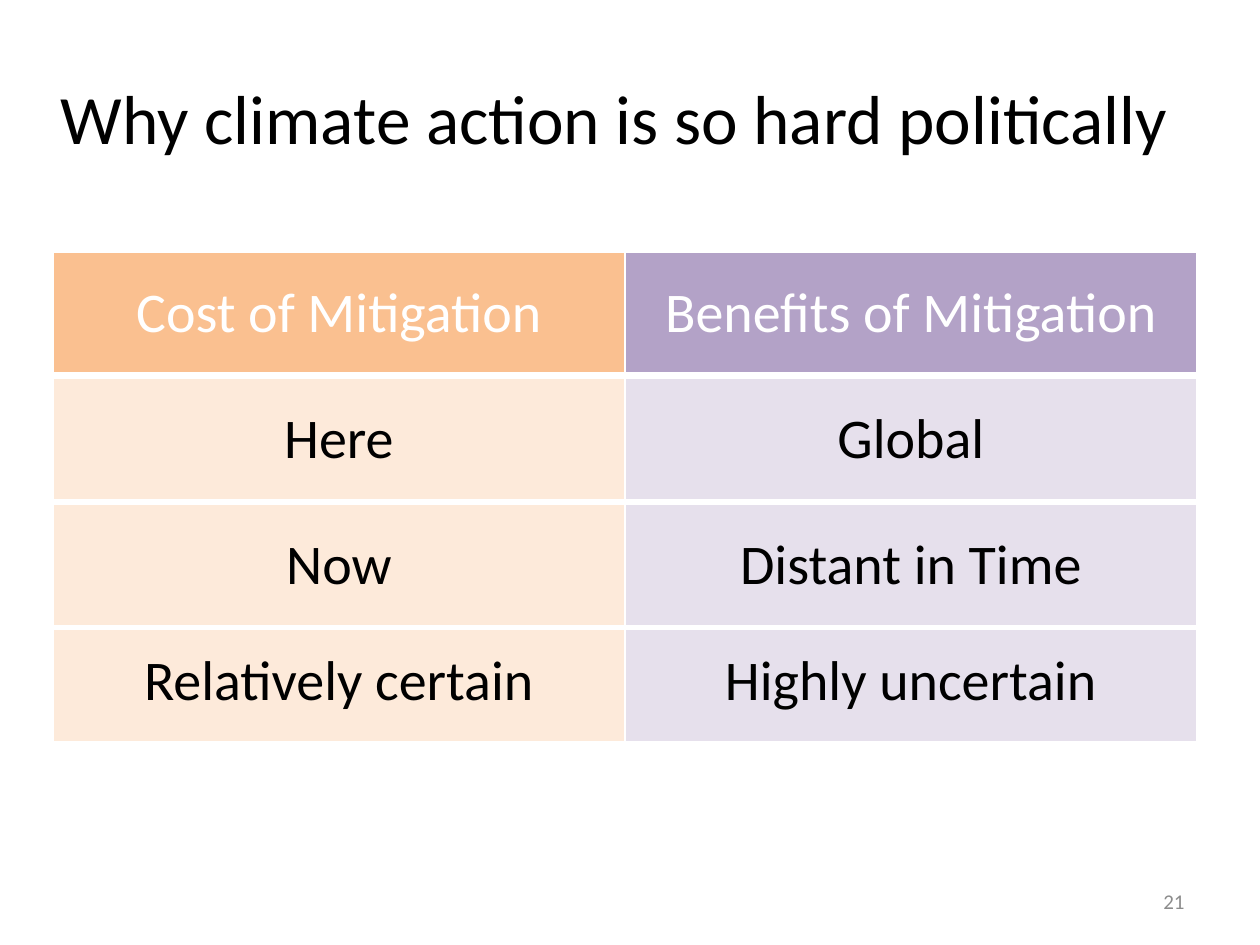
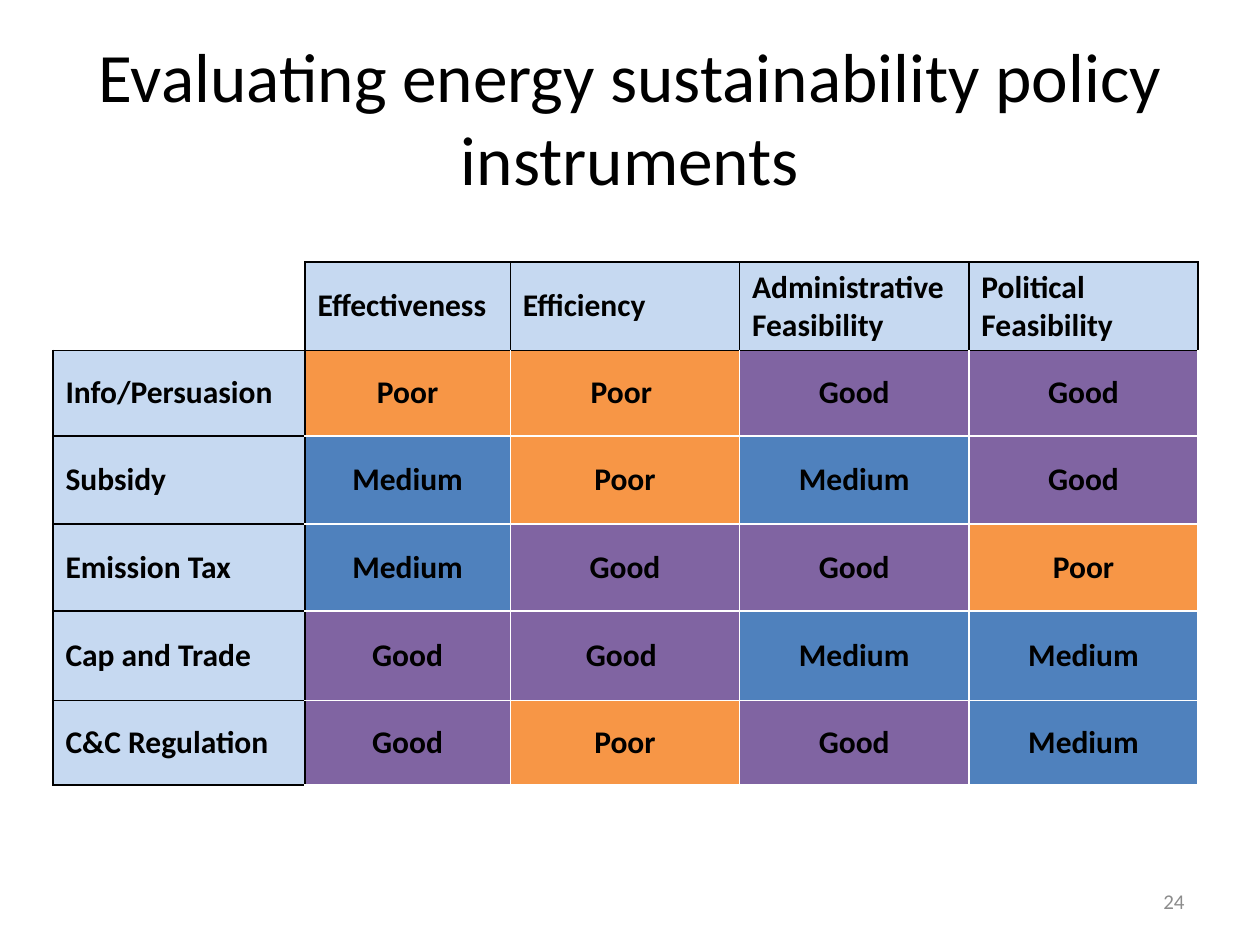
import dataclasses

import pptx
import pptx.dml.color
import pptx.enum.text
import pptx.oxml
import pptx.oxml.ns
import pptx.util
from pptx.util import Inches

ALIGN = pptx.enum.text.PP_ALIGN
MIDDLE = pptx.enum.text.MSO_ANCHOR.MIDDLE


@dataclasses.dataclass(frozen=True)
class Theme:
    font: str = "Calibri"
    ink: str = "000000"
    paper: str = "FFFFFF"
    muted: str = "8C8C8C"
    label: str = "C6D9F1"
    cost_head: str = "FAC090"
    cost_body: str = "FDEADA"
    benefit_head: str = "B3A2C7"
    benefit_body: str = "E6E0EC"
    poor: str = "F79646"
    medium: str = "4F81BD"
    good: str = "8064A2"
    title_size: float = 39.6
    contrast_size: float = 32
    matrix_size: float = 18
    number_size: float = 12


THEME = Theme()
TABLE_LEFT, TABLE_WIDTH = 0.42, 9.08

CONTRASTS = [  # top, height, cost, benefit
    (2, 0.97, "Cost of Mitigation", "Benefits of Mitigation"),
    (4.92, 0.98, "Relatively certain", "Highly uncertain"),
    (4, 0.98, "Now", "Distant in Time"),
    (3, 0.98, "Here", "Global"),
]

INSTRUMENTS = [
    ["", "Effectiveness", "Efficiency", "Administrative Feasibility", "Political Feasibility"],
    ["Info/Persuasion", "Poor", "Poor ", "Good", "Good"],
    ["Subsidy", "Medium", "Poor", "Medium", "Good"],
    ["Emission Tax", "Medium", "Good", "Good", "Poor"],
    ["Cap and Trade", "Good", "Good ", "Medium", "Medium"],
    ["C&C Regulation", "Good", "Poor", "Good", "Medium"],
]
CRITERIA_WIDTHS = [2, 1.63, 1.82, 1.82, 1.82]
INSTRUMENT_HEIGHTS = [0.67, 0.68, 0.7, 0.69, 0.71, 0.67]


def rgb(colour):
    return pptx.dml.color.RGBColor.from_string(colour)


def write(frame, text, size, colour, align, bold=False):
    frame.text = text
    paragraph = frame.paragraphs[0]
    paragraph.alignment = align
    font = paragraph.font
    font.name, font.size, font.bold = THEME.font, pptx.util.Pt(size), bold
    font.color.rgb = rgb(colour)


def start_slide(deck, title, number, left, width):
    """Add a slide with its title and page number."""
    slide = deck.slides.add_slide(deck.slide_layouts[5])
    heading = slide.shapes.title
    heading.left, heading.top = Inches(left), Inches(0.3)
    heading.width, heading.height = Inches(width), Inches(1.25)
    write(heading.text_frame, title, THEME.title_size, THEME.ink, ALIGN.CENTER)
    heading.text_frame.auto_size = pptx.enum.text.MSO_AUTO_SIZE.NONE
    heading.text_frame.vertical_anchor = MIDDLE

    page = slide.shapes.add_textbox(Inches(7.17), Inches(6.95), Inches(2.33), Inches(0.4))
    page.text_frame.word_wrap = True
    page.text_frame.vertical_anchor = MIDDLE
    write(page.text_frame, str(number), THEME.number_size, THEME.muted, ALIGN.RIGHT)
    return slide


def add_grid(slide, top, widths, heights):
    grid = slide.shapes.add_table(
        len(heights), len(widths), Inches(TABLE_LEFT), Inches(top),
        Inches(TABLE_WIDTH), Inches(sum(heights))).table
    grid.first_row = grid.horz_banding = False
    for column, width in zip(grid.columns, widths):
        column.width = Inches(width)
    for row, height in zip(grid.rows, heights):
        row.height = Inches(height)
    return grid


def style_cell(cell, fill, borders):
    """Fill a cell and rule its sides; borders maps L, R, T, B to (colour, points)."""
    cell.vertical_anchor = MIDDLE
    cell.fill.solid()
    cell.fill.fore_color.rgb = rgb(fill)
    properties = cell._tc.get_or_add_tcPr()
    for position, side in enumerate("LRTB"):
        colour, points = borders[side]
        properties.insert(position, pptx.oxml.parse_xml(
            f'<a:ln{side} {pptx.oxml.ns.nsdecls("a")} w="{pptx.util.Pt(points)}">'
            f'<a:solidFill><a:srgbClr val="{colour}"/></a:solidFill></a:ln{side}>'))


def add_contrast(slide, top, height, pair, fills, colour):
    """Add one cost and benefit strip with a thick rule below it."""
    grid = add_grid(slide, top, [TABLE_WIDTH / 2] * 2, [height])
    borders = {side: (THEME.paper, 3 if side == "B" else 1) for side in "LRTB"}
    for cell, text, fill in zip(grid.rows[0].cells, pair, fills):
        write(cell.text_frame, text, THEME.contrast_size, colour, ALIGN.CENTER)
        style_cell(cell, fill, borders)


def build_politics_slide(deck):
    slide = start_slide(deck, "Why climate action is so hard politically", 21, 0.25, 9.25)
    for index, (top, height, *pair) in enumerate(CONTRASTS):
        if index == 0:
            fills, colour = (THEME.cost_head, THEME.benefit_head), THEME.paper
        else:
            fills, colour = (THEME.cost_body, THEME.benefit_body), THEME.ink
        add_contrast(slide, top, height, pair, fills, colour)


def is_label(row, column):
    return (row == 0) != (column == 0)


def matrix_borders(row, column):
    """Rule a side in ink where it touches a label cell, otherwise in paper."""
    neighbours = {"L": (row, column - 1), "R": (row, column + 1),
                  "T": (row - 1, column), "B": (row + 1, column)}
    return {side: (THEME.ink if is_label(row, column)
                   or min(place) >= 0 and is_label(*place) else THEME.paper, 1)
            for side, place in neighbours.items()}


def build_instruments_slide(deck):
    slide = start_slide(deck, "Evaluating energy sustainability policy instruments", 24, 0.5, 9)
    grid = add_grid(slide, 2.08, CRITERIA_WIDTHS, INSTRUMENT_HEIGHTS)
    ratings = {"Poor": THEME.poor, "Medium": THEME.medium, "Good": THEME.good}
    for row, entries in enumerate(INSTRUMENTS):
        for column, text in enumerate(entries):
            cell = grid.cell(row, column)
            label = is_label(row, column)
            fill = THEME.label if label else ratings.get(text.strip(), THEME.paper)
            write(cell.text_frame, text, THEME.matrix_size, THEME.ink,
                  ALIGN.LEFT if label else ALIGN.CENTER, bold=True)
            style_cell(cell, fill, matrix_borders(row, column))


def main():
    deck = pptx.Presentation()
    deck.slide_width, deck.slide_height = Inches(10), Inches(7.5)
    build_politics_slide(deck)
    build_instruments_slide(deck)
    deck.save("out.pptx")


if __name__ == "__main__":
    main()
